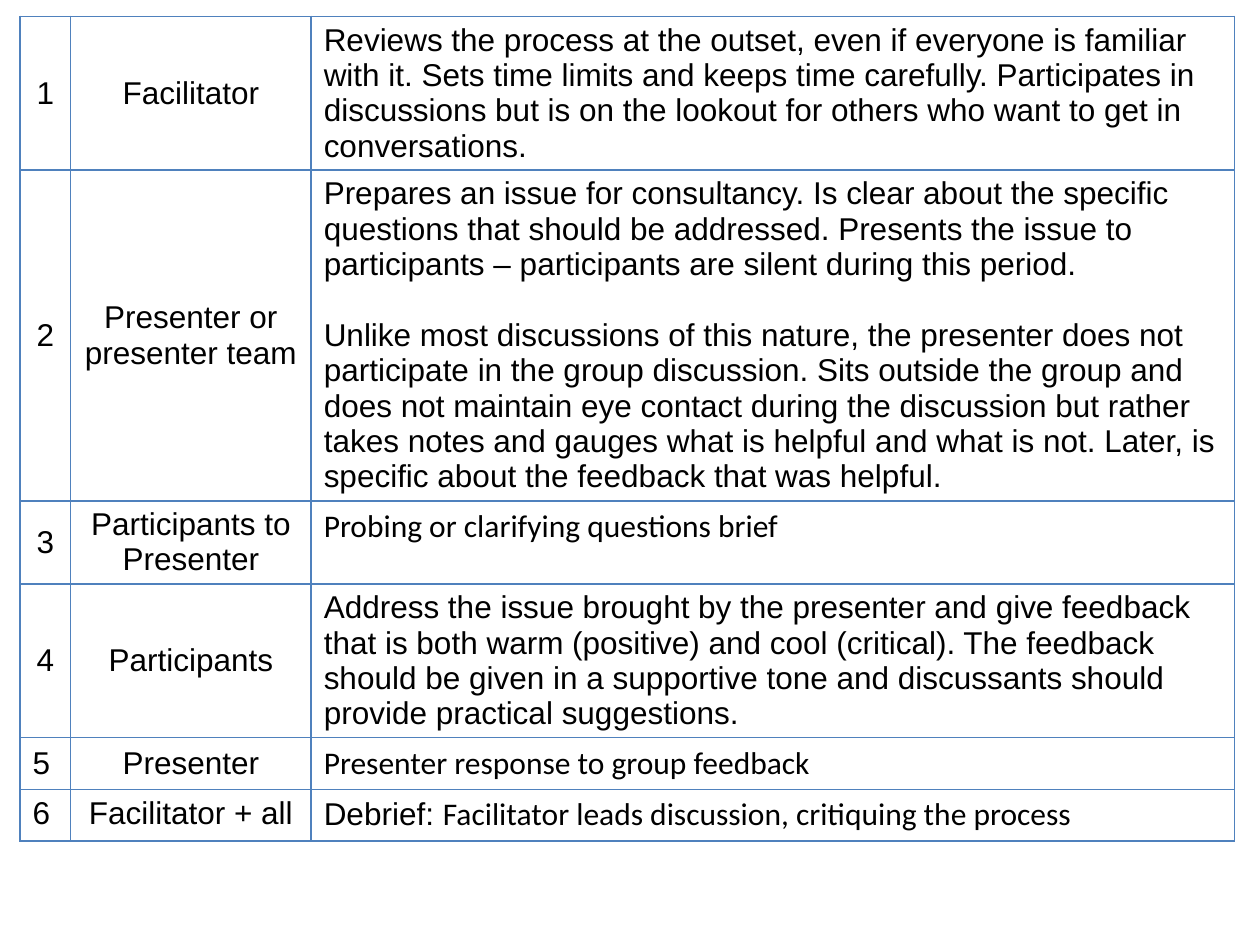
from dataclasses import dataclass

from lxml.etree import SubElement
from pptx import Presentation
from pptx.dml.color import RGBColor
from pptx.enum.text import MSO_ANCHOR, PP_ALIGN
from pptx.oxml.ns import qn
from pptx.util import Inches, Pt


@dataclass(frozen=True)
class Theme:
    """Colours, fonts and sizes of the deck."""

    text: str = "000000"
    border: str = "4F81BD"
    main_font: str = "Arial"
    alternate_font: str = "Calibri"
    size: float = 18
    paragraph_gap: float = 20.5
    border_width: float = 1


@dataclass(frozen=True)
class Step:
    """One row of the protocol; each paragraph is a list of (text, is_alternate) spans."""

    role: str
    paragraphs: list
    number_alignment: PP_ALIGN = PP_ALIGN.CENTER
    anchor: MSO_ANCHOR = MSO_ANCHOR.MIDDLE


STEPS = [
    Step("Facilitator", [[(
        "Reviews the process at the outset, even if everyone is familiar with it. "
        "Sets time limits and keeps time carefully. Participates in discussions but "
        "is on the lookout for others who want to get in conversations.", False)]]),
    Step("Presenter or presenter team", [
        [("Prepares an issue for consultancy. Is clear about the specific questions "
          "that should be addressed. Presents the issue to participants – "
          "participants are silent during this period.", False)],
        [("Unlike most discussions of this nature, the presenter does not participate "
          "in the group discussion. Sits outside the group and does not maintain eye "
          "contact during the discussion but rather takes notes and gauges what is "
          "helpful and what is not. Later, is specific about the feedback that was "
          "helpful.", False)],
    ]),
    Step("Participants to Presenter", [[("Probing or clarifying questions brief", True)]]),
    Step("Participants", [[(
        "Address the issue brought by the presenter and give feedback that is both "
        "warm (positive) and cool (critical). The feedback should be given in a "
        "supportive tone and discussants should provide practical suggestions.", False)]]),
    Step("Presenter", [[("Presenter response to group feedback", True)]],
         number_alignment=PP_ALIGN.LEFT),
    Step("Facilitator + all", [[
        ("Debrief: ", False),
        ("Facilitator leads discussion, critiquing the process", True)]],
         number_alignment=PP_ALIGN.LEFT, anchor=MSO_ANCHOR.TOP),
]


class PageBuilder:
    """Draws styled elements on the current slide."""

    def __init__(self, page, theme):
        self.page = page
        self.theme = theme

    def border(self, cell):
        properties = cell._tc.get_or_add_tcPr()
        for position, side in enumerate(("a:lnL", "a:lnR", "a:lnT", "a:lnB")):
            line = properties.makeelement(
                qn(side), {"w": str(Pt(self.theme.border_width))})
            fill = SubElement(line, qn("a:solidFill"))
            SubElement(fill, qn("a:srgbClr"), val=self.theme.border)
            properties.insert(position, line)

    def cell(self, cell, paragraphs, alignment=PP_ALIGN.LEFT, anchor=MSO_ANCHOR.TOP):
        cell.fill.background()
        cell.vertical_anchor = anchor
        self.border(cell)
        frame = cell.text_frame
        for index, spans in enumerate(paragraphs):
            para = frame.add_paragraph() if index else frame.paragraphs[0]
            para.alignment = alignment
            if index:
                para.space_before = Pt(self.theme.paragraph_gap)
            for text, is_alternate in spans:
                span = para.add_run()
                span.text = text
                span.font.size = Pt(self.theme.size)
                span.font.name = (self.theme.alternate_font if is_alternate
                                  else self.theme.main_font)
                span.font.color.rgb = RGBColor.from_string(self.theme.text)

    def step_table(self, steps, left, top, widths, row_height):
        table = self.page.shapes.add_table(
            len(steps), len(widths), Inches(left), Inches(top),
            Inches(sum(widths)), Inches(row_height * len(steps))).table
        table.first_row = False
        table.horz_banding = False
        for column, width in zip(table.columns, widths):
            column.width = Inches(width)
        for number, (row, step) in enumerate(zip(table.rows, steps), start=1):
            row.height = Inches(row_height)
            number_cell, role_cell, task_cell = row.cells
            self.cell(number_cell, [[(str(number), False)]],
                      step.number_alignment, step.anchor)
            self.cell(role_cell, [[(step.role, False)]], PP_ALIGN.CENTER, step.anchor)
            self.cell(task_cell, step.paragraphs)


def main():
    deck = Presentation()
    deck.slide_width = Inches(10)
    deck.slide_height = Inches(7.5)
    page = deck.slides.add_slide(deck.slide_layouts[6])
    builder = PageBuilder(page, Theme())
    builder.step_table(STEPS, left=0.16, top=0.13,
                       widths=(0.4, 1.91, 7.33), row_height=0.41)
    deck.save("out.pptx")


if __name__ == "__main__":
    main()
